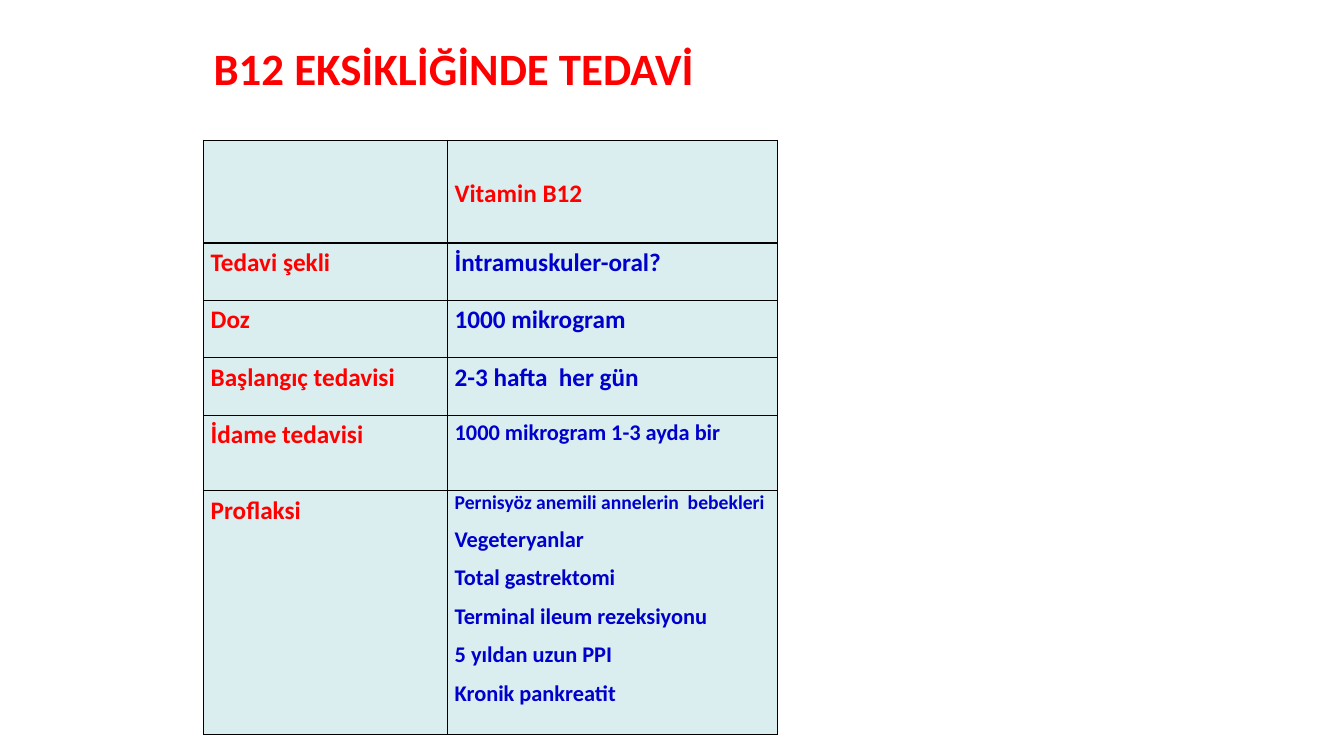
from lxml.etree import SubElement
from pptx import Presentation
from pptx.dml.color import RGBColor
from pptx.enum.text import MSO_ANCHOR, MSO_AUTO_SIZE
from pptx.oxml.ns import qn
from pptx.util import Pt

PX = 9144
FONT = "Calibri"
RED = RGBColor(0xFF, 0x00, 0x00)
BLUE = RGBColor(0x00, 0x00, 0xCC)
PALE_TEAL = RGBColor(0xDA, 0xED, 0xEF)
BLACK = RGBColor(0x00, 0x00, 0x00)

COLUMN_WIDTHS = [242, 327]
ROW_HEIGHTS = [102, 57, 57, 57, 75, 242]
TREATMENTS = [
    ("Tedavi şekli", "İntramuskuler-oral?", 18),
    ("Doz", "1000 mikrogram", 18),
    ("Başlangıç tedavisi", "2-3 hafta  her gün", 18),
    ("İdame tedavisi", "1000 mikrogram 1-3 ayda bir", 16),
]
PROPHYLAXIS_GROUPS = [
    "Pernisyöz anemili annelerin  bebekleri",
    "Vegeteryanlar",
    "Total gastrektomi",
    "Terminal ileum rezeksiyonu",
    "5 yıldan uzun PPI",
    "Kronik pankreatit",
]


def write(paragraph, text, size, color):
    """Put bold text into a paragraph."""
    paragraph.text = text
    font = paragraph.font
    font.name, font.size, font.bold = FONT, Pt(size), True
    font.color.rgb = color


def write_cell(cell, text, size, color):
    """Fill a table cell with one line of text."""
    paragraph = cell.text_frame.paragraphs[0]
    write(paragraph, text, size, color)
    paragraph.line_spacing = 1.15


def style_cell(cell):
    """Give a cell its fill, margins and black borders."""
    cell.margin_left = cell.margin_right = 7 * PX
    cell.margin_top = cell.margin_bottom = 0
    properties = cell._tc.get_or_add_tcPr()
    for side in ("lnL", "lnR", "lnT", "lnB"):
        border = SubElement(properties, qn(f"a:{side}"), w=str(Pt(1)))
        paint = SubElement(border, qn("a:solidFill"))
        SubElement(paint, qn("a:srgbClr"), val=str(BLACK))
    cell.fill.solid()
    cell.fill.fore_color.rgb = PALE_TEAL


def add_title(slide, left, top, width, height):
    """Add the slide heading."""
    heading = slide.shapes.add_textbox(left * PX, top * PX, width * PX, height * PX)
    frame = heading.text_frame
    frame.word_wrap = True
    frame.auto_size = MSO_AUTO_SIZE.SHAPE_TO_FIT_TEXT
    write(frame.paragraphs[0], "B12 EKSİKLİĞİNDE TEDAVİ", 32, RED)


def add_treatment_table(slide, left, top):
    """Add the treatment table with its upper left corner at the given point."""
    table = slide.shapes.add_table(
        len(ROW_HEIGHTS), len(COLUMN_WIDTHS), left * PX, top * PX,
        sum(COLUMN_WIDTHS) * PX, sum(ROW_HEIGHTS) * PX).table
    table.first_row = table.horz_banding = False
    for column, width in zip(table.columns, COLUMN_WIDTHS):
        column.width = width * PX
    for row, height in zip(table.rows, ROW_HEIGHTS):
        row.height = height * PX
    for cell in table.iter_cells():
        style_cell(cell)

    vitamin = table.cell(0, 1)
    vitamin.vertical_anchor = MSO_ANCHOR.MIDDLE
    write_cell(vitamin, "Vitamin B12", 18, RED)
    for index, (label, treatment, size) in enumerate(TREATMENTS, 1):
        write_cell(table.cell(index, 0), label, 18, RED)
        write_cell(table.cell(index, 1), treatment, size, BLUE)

    last = len(ROW_HEIGHTS) - 1
    write_cell(table.cell(last, 0), "Proflaksi", 18, RED)
    frame = table.cell(last, 1).text_frame
    for index, group in enumerate(PROPHYLAXIS_GROUPS):
        paragraph = frame.add_paragraph() if index else frame.paragraphs[0]
        write(paragraph, group, 16 if index else 14, BLUE)
        paragraph.space_before = Pt(8 if index else 0)


def main():
    """Build and save the slide."""
    presentation = Presentation()
    presentation.slide_width = 1333 * PX
    presentation.slide_height = 750 * PX
    slide = presentation.slides.add_slide(presentation.slide_layouts[6])
    add_treatment_table(slide, 202, 139)
    add_title(slide, 202, 36, 858, 64)
    presentation.save("out.pptx")


if __name__ == "__main__":
    main()
